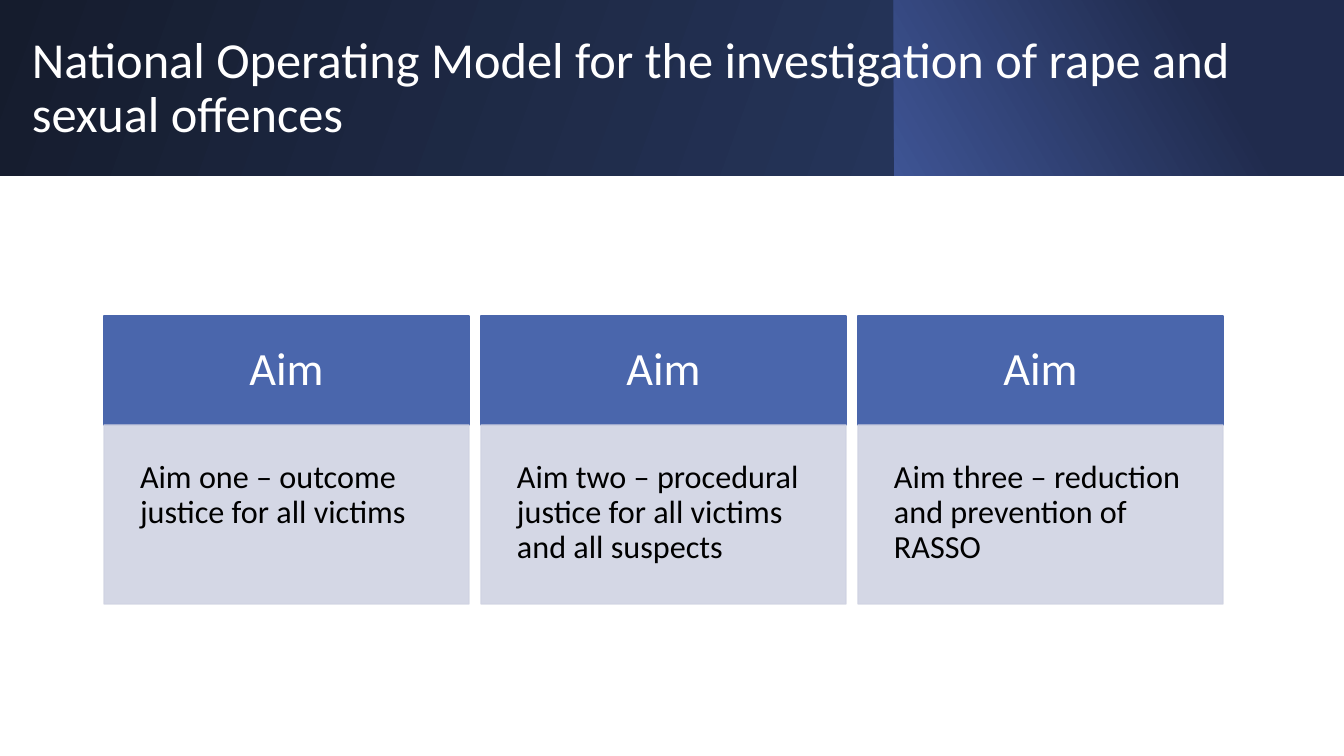
from pptx import Presentation
from pptx.dml.color import RGBColor as RGB
from pptx.enum.shapes import MSO_SHAPE as SHAPE
from pptx.enum.text import MSO_ANCHOR as ANCHOR, PP_ALIGN as ALIGN
from pptx.oxml.ns import qn
from pptx.util import Pt
from lxml.etree import SubElement

PX = 914400 / 100.8  # EMU in one px
HUES = {"white": "FFFFFF", "black": "000000", "blue": "4A66AC", "pale": "D0D3E3",
        "night": "151C2D", "navy": "253459", "glow": "3E5494", "dusk": "202B4D"}


def rect(left, top, width, height):
    box = slide.shapes.add_shape(
        SHAPE.RECTANGLE, *[round(n * PX) for n in (left, top, width, height)])
    box.shadow.inherit = False
    box.line.fill.background()
    return box


def write(box, text, size, hue, inset, anchor, align=ALIGN.LEFT):
    frame = box.text_frame
    frame.word_wrap = True
    frame.vertical_anchor = anchor
    frame.margin_left = frame.margin_right = round(inset * PX)
    frame.margin_top = frame.margin_bottom = round(inset * PX)
    para = frame.paragraphs[0]
    para.text = text
    para.alignment = align
    para.line_spacing = 0.9
    para.font.name = "Calibri"
    para.font.size = Pt(size)
    para.font.color.rgb = RGB.from_string(HUES[hue])


prs = Presentation()
prs.slide_width, prs.slide_height = round(1344 * PX), round(756 * PX)
slide = prs.slides.add_slide(prs.slide_layouts[6])

# Banner: left and right panels with gradients
panels = [(0, 894, "night", "navy", 340, 1), (894, 450, "glow", "dusk", 30, 0.7)]
for left, width, start, end, angle, stop in panels:
    panel = rect(left, 0, width, 176)
    panel.fill.gradient()
    panel.fill.gradient_angle = angle
    first, last = panel.fill.gradient_stops
    first.color.rgb = RGB.from_string(HUES[start])
    last.color.rgb = RGB.from_string(HUES[end])
    first.position, last.position = 0, stop

# Title
title = slide.shapes.add_textbox(*[round(n * PX) for n in (22, 32, 1322, 114)])
write(title, "National Operating Model for the investigation of rape and sexual offences",
      36, "white", 10, ANCHOR.MIDDLE)

# Three aims, each a heading over a body
aims = ["Aim one – outcome justice for all victims",
        "Aim two – procedural justice for all victims and all suspects",
        "Aim three – reduction and prevention of RASSO"]
for i, aim in enumerate(aims):
    left = 104 + 377 * i
    head = rect(left, 316, 365, 109)
    body = rect(left, 425, 365, 179)
    for box, hue in ((head, "blue"), (body, "pale")):
        box.fill.solid()
        box.fill.fore_color.rgb = RGB.from_string(HUES[hue])
        box.line.color.rgb = RGB.from_string(HUES[hue])
        box.line.width = Pt(1)
    # Body fill and line are 90% opaque
    for tint in body._element.spPr.iter(qn("a:srgbClr")):
        SubElement(tint, qn("a:alpha"), val="90000")
    write(head, "Aim", 33, "white", 29, ANCHOR.MIDDLE, ALIGN.CENTER)
    write(body, aim, 23, "black", 36, ANCHOR.TOP)

prs.save("out.pptx")
